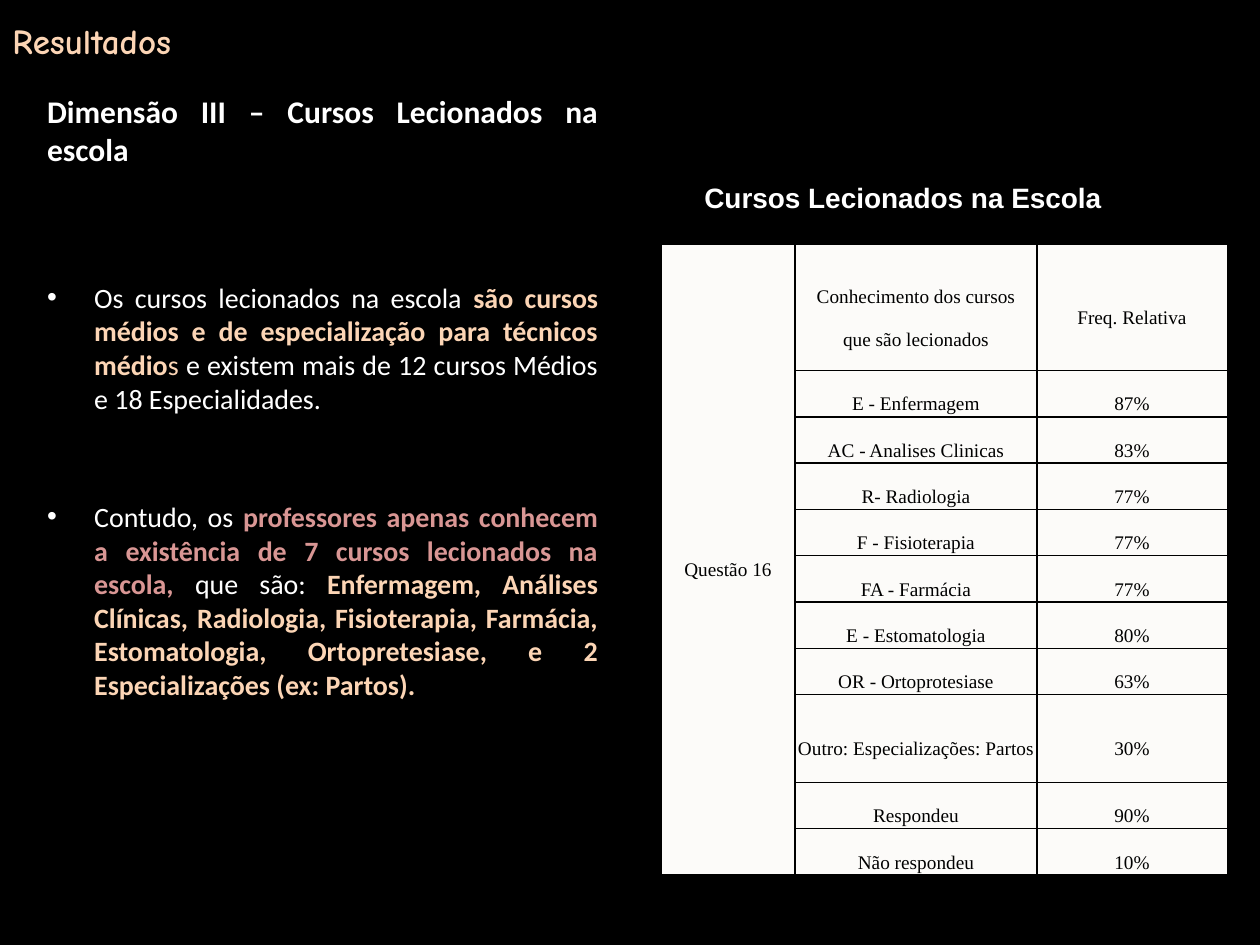
from lxml.etree import SubElement
from pptx import Presentation
from pptx.dml.color import RGBColor
from pptx.enum.text import MSO_ANCHOR as Anchor, PP_ALIGN as Align
from pptx.oxml import parse_xml
from pptx.oxml.ns import nsdecls, qn
from pptx.util import Cm, Pt

COLORS = {
    "black": "000000",
    "white": "FFFFFF",
    "peach": "FCD5B5",
    "rose": "D99694",
    "paper": "FCFBF9",
}

HEADING = "Dimensão III – Cursos Lecionados na escola"
BULLETS = [
    (64.5, [
        ("Os cursos lecionados na escola ", "white", False),
        ("são cursos médios e de especialização para técnicos médio", "peach", True),
        ("s ", "peach", False),
        ("e existem mais de 12 cursos Médios e 18 Especialidades.", "white", False),
    ]),
    (48.5, [
        ("Contudo, os ", "white", False),
        ("professores apenas conhecem a existência de 7 cursos lecionados na escola, ",
         "rose", True),
        ("que são: ", "white", False),
        ("Enfermagem, Análises Clínicas, Radiologia, Fisioterapia, Farmácia, "
         "Estomatologia, Ortopretesiase, e 2 Especializações (ex: Partos).", "peach", True),
    ]),
]

QUESTION = "Questão 16"
ROWS = [
    ("Conhecimento dos cursos\nque são lecionados", "Freq. Relativa"),
    ("E - Enfermagem", "87%"),
    ("AC - Analises Clinicas", "83%"),
    ("R- Radiologia", "77%"),
    ("F - Fisioterapia", "77%"),
    ("FA - Farmácia", "77%"),
    ("E - Estomatologia", "80%"),
    ("OR - Ortoprotesiase", "63%"),
    ("Outro: Especializações: Partos", "30%"),
    ("Respondeu", "90%"),
    ("Não respondeu", "10%"),
]
COLUMN_WIDTHS = (2.71, 4.87, 3.84)
ROW_HEIGHT = 0.92
TALL_ROWS = {0: 2.54, 8: 1.77}


def color(name):
    return RGBColor.from_string(COLORS[name])


def set_font(font, face, size, tint, bold=False):
    font.name = face
    font.size = Pt(size)
    font.bold = bold
    font.color.rgb = color(tint)


def add_text_box(page, left, top, width, height, anchor=Anchor.TOP):
    box = page.shapes.add_textbox(Cm(left), Cm(top), Cm(width), Cm(height))
    box.text_frame.word_wrap = True
    box.text_frame.vertical_anchor = anchor
    return box.text_frame


def add_title(page, left, top, width, height):
    para = add_text_box(page, left, top, width, height, Anchor.MIDDLE).paragraphs[0]
    para.text = "Resultados"
    set_font(para.font, "Comic Neue", 20, "peach", True)


def add_bullet(para):
    props = para._p.get_or_add_pPr()
    props.set("marL", str(Cm(0.95)))
    props.set("indent", str(Cm(-0.95)))
    SubElement(props, qn("a:buFont")).set("typeface", "Arial")
    SubElement(props, qn("a:buChar")).set("char", "•")


def add_findings(page, left, top, width, height):
    frame = add_text_box(page, left, top, width, height)
    heading = frame.paragraphs[0]
    heading.text = HEADING
    heading.alignment = Align.JUSTIFY
    set_font(heading.font, "Calibri", 18, "white", True)
    for gap, spans in BULLETS:
        para = frame.add_paragraph()
        para.alignment = Align.JUSTIFY
        para.space_before = Pt(gap)
        add_bullet(para)
        for text, tint, bold in spans:
            span = para.add_run()
            span.text = text
            set_font(span.font, "Calibri", 16, tint, bold)


def add_borders(cell):
    props = cell._tc.get_or_add_tcPr()
    for index, side in enumerate(("lnL", "lnR", "lnT", "lnB")):
        props.insert(index, parse_xml(
            f'<a:{side} {nsdecls("a")} w="{Pt(1)}"><a:solidFill>'
            f'<a:srgbClr val="{COLORS["black"]}"/></a:solidFill></a:{side}>'))


def fill_cell(cell, text):
    cell.fill.solid()
    cell.fill.fore_color.rgb = color("paper")
    cell.margin_left = cell.margin_right = cell.margin_top = cell.margin_bottom = 0
    cell.vertical_anchor = Anchor.MIDDLE
    cell.text_frame.text = text
    for para in cell.text_frame.paragraphs:
        para.alignment = Align.CENTER
        para.line_spacing = 2.0
        set_font(para.font, "Times New Roman", 11, "black")
    add_borders(cell)


def add_course_table(page, left, top):
    heights = [TALL_ROWS.get(index, ROW_HEIGHT) for index in range(len(ROWS))]
    table = page.shapes.add_table(
        len(ROWS), len(COLUMN_WIDTHS), Cm(left), Cm(top),
        Cm(sum(COLUMN_WIDTHS)), Cm(sum(heights))).table
    table.first_row = table.horz_banding = False
    for column, width in zip(table.columns, COLUMN_WIDTHS):
        column.width = Cm(width)
    for index, (height, texts) in enumerate(zip(heights, ROWS)):
        table.rows[index].height = Cm(height)
        question = QUESTION if index == 0 else ""
        for column, text in enumerate((question, *texts)):
            fill_cell(table.cell(index, column), text)
    table.cell(0, 0).merge(table.cell(len(ROWS) - 1, 0))


def add_table_title(page, left, top, width, height):
    para = add_text_box(page, left, top, width, height, Anchor.MIDDLE).paragraphs[0]
    para.text = "Cursos Lecionados na Escola"
    para.alignment = Align.JUSTIFY
    para._p.get_or_add_pPr().set("indent", str(Cm(1.25)))
    set_font(para.font, "Arial", 16, "white", True)


def main():
    deck = Presentation()
    deck.slide_width, deck.slide_height = Cm(25.4), Cm(19.05)
    page = deck.slides.add_slide(deck.slide_layouts[6])
    page.background.fill.solid()
    page.background.fill.fore_color.rgb = color("black")
    add_findings(page, 0.7, 1.73, 11.61, 16.4)
    add_course_table(page, 13.32, 4.93)
    add_title(page, 0, 0.26, 16.7, 1.11)
    add_table_title(page, 12.7, 3.5, 13.2, 0.94)
    deck.save("out.pptx")


if __name__ == "__main__":
    main()
